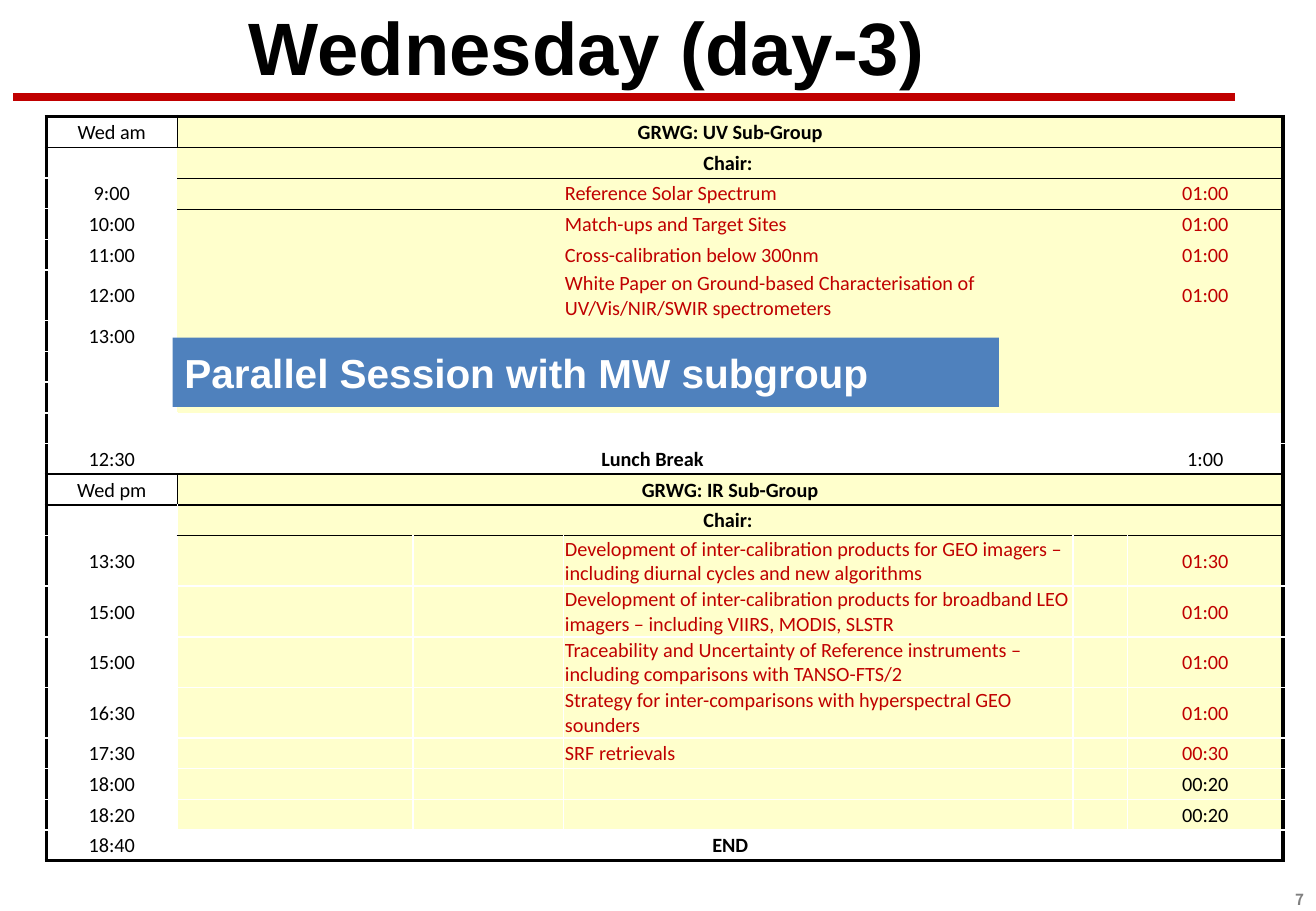
from lxml import etree
from pptx import Presentation
from pptx import util as u
from pptx.dml.color import RGBColor
from pptx.enum import shapes, text
from pptx.oxml import ns

WIDE, HIGH = 10.83, 7.5
BLACK, WHITE, RED, CREAM = "000000", "FFFFFF", "C00000", "FFFFCC"
GREY, BLUE = "808080", "4F81BD"
TITLE = "Wednesday (day-3)"
BANNER = "Parallel Session with MW subgroup"
PAGE = "7"

# time, text, length, columns that the text spans
AGENDA = [
    ("Wed am", "GRWG: UV Sub-Group", "", 5),
    ("", "Chair: ", "", 5),
    ("9:00", "Reference Solar Spectrum", "01:00", 1),
    ("10:00", "Match-ups and Target Sites", "01:00", 1),
    ("11:00", "Cross-calibration below 300nm", "01:00", 1),
    ("12:00", "White Paper on Ground-based Characterisation of "
     "UV/Vis/NIR/SWIR spectrometers", "01:00", 1),
    ("13:00", "", "", 1),
    ("", "", "", 1),
    ("", "", "", 1),
    ("", "", "", 1),
    ("12:30", "Lunch Break", "1:00", 4),
    ("Wed pm", "GRWG: IR Sub-Group", "", 5),
    ("", "Chair: ", "", 5),
    ("13:30", "Development of inter-calibration products for GEO imagers – "
     "including diurnal cycles and new algorithms", "01:30", 1),
    ("15:00", "Development of inter-calibration products for broadband LEO "
     "imagers – including VIIRS, MODIS, SLSTR", "01:00", 1),
    ("15:00", "Traceability and Uncertainty of Reference instruments – "
     "including comparisons with TANSO-FTS/2", "01:00", 1),
    ("16:30", "Strategy for inter-comparisons with hyperspectral GEO sounders",
     "01:00", 1),
    ("17:30", "SRF retrievals", "00:30", 1),
    ("18:00", "", "00:20", 1),
    ("18:20", "", "00:20", 1),
    ("18:40", "END", "", 5),
]
COLS = [1.08, 1.94, 1.24, 4.19, 0.45, 1.28]
LOW, TALL, LONG = 18.2, 29.9, 55     # row heights in points, letters per line
LUNCH, END = 10, len(AGENDA) - 1
PLAIN = {LUNCH - 1, LUNCH, END}      # rows without the cream fill
HEADS = {0, LUNCH + 1}               # rows that open a half day
THICK, THIN, FINE, PALE = (BLACK, 2.25), (BLACK, 1), (BLACK, 0.25), (WHITE, 1)
RULES = {0: THICK, 1: THIN, 2: FINE, 11: THIN, 12: THIN, 13: FINE,
         END + 1: THICK}
NO_STYLE = "{2D5ABB26-0587-4C30-8999-92F81FD0307C}"


def rgb(code):
    return RGBColor.from_string(code)


def write(para, words, size, font, color, bold, align):
    para.alignment = align
    run = para.add_run()
    run.text = words
    face = run.font
    face.size, face.name, face.bold = u.Pt(size), font, bold
    face.color.rgb = rgb(color)


def across(row, col):
    """Line above the given row, in the given column."""
    if col == 0 and RULES.get(row) == FINE:
        return PALE
    return RULES.get(row) or (PALE if col == 0 or row >= LUNCH else None)


def down(row, col):
    """Line to the left of the given column, in the given row."""
    if col in (0, len(COLS)):
        return THICK
    if col == 1 and row in HEADS:
        return THIN
    return PALE if row >= LUNCH - 1 else None


def border(cell, side, line):
    if line:
        color, width = line
        edge = etree.SubElement(cell._tc.get_or_add_tcPr(), ns.qn("a:ln" + side),
                                w=str(u.Pt(width)))
        fill = etree.SubElement(edge, ns.qn("a:solidFill"))
        etree.SubElement(fill, ns.qn("a:srgbClr"), val=color)


def dress(cell, row, col, span):
    """Borders, fill, insets and the text height of an empty cell."""
    first, last = (1, span) if span > 1 and 1 <= col <= span else (col, col)
    border(cell, "L", down(row, col) if col == first else None)
    border(cell, "R", down(row, last + 1) if col in (first, last) else None)
    border(cell, "T", across(row, col))
    border(cell, "B", across(row + 1, col))
    cell.fill.solid()
    cell.fill.fore_color.rgb = rgb(WHITE if col == 0 or row in PLAIN else CREAM)
    cell.margin_left = cell.margin_right = cell.margin_top = u.Inches(0.01)
    cell.margin_bottom = 0
    cell.vertical_anchor = text.MSO_ANCHOR.MIDDLE
    para = cell.text_frame.paragraphs[0]._p
    etree.SubElement(para, ns.qn("a:endParaRPr"), sz="1200")


def agenda(slide):
    size = [u.Inches(n) for n in (0.38, 0.96, sum(COLS), 6.08)]
    frame = slide.shapes.add_table(len(AGENDA), len(COLS), *size)
    grid = frame.table
    grid.first_row = grid.horz_banding = False
    grid._tbl.tblPr.find(ns.qn("a:tableStyleId")).text = NO_STYLE
    for col, width in zip(grid.columns, COLS):
        col.width = u.Inches(width)
    mid, left = text.PP_ALIGN.CENTER, text.PP_ALIGN.LEFT
    for row, (time, topic, length, span) in enumerate(AGENDA):
        grid.rows[row].height = u.Pt(TALL if len(topic) > LONG else LOW)
        for col in range(len(COLS)):
            dress(grid.cell(row, col), row, col, span)
        wide = span > 1
        if wide:
            grid.cell(row, 1).merge(grid.cell(row, span))
        ink = RED if topic and not wide else BLACK
        parts = [(0, time, BLACK, False, mid),
                 (1 if wide else 3, topic, ink, wide, mid if wide else left),
                 (5, length, ink, False, mid)]
        for col, words, color, bold, align in parts:
            if words:
                para = grid.cell(row, col).text_frame.paragraphs[0]
                write(para, words, 12, "Calibri", color, bold, align)


def place(shape, *box):
    shape.left, shape.top, shape.width, shape.height = map(u.Inches, box)


def main():
    deck = Presentation()
    deck.slide_width, deck.slide_height = u.Inches(WIDE), u.Inches(HIGH)
    slide = deck.slides.add_slide(deck.slide_layouts[5])
    parts = slide.shapes

    title = parts.title
    place(title, 0.16, 0.08, 9.34, 0.6)
    title.text_frame.vertical_anchor = text.MSO_ANCHOR.MIDDLE
    title.text_frame.auto_size = text.MSO_AUTO_SIZE.NONE
    write(title.text_frame.paragraphs[0], TITLE, 44, "Arial", BLACK, True,
          text.PP_ALIGN.CENTER)

    ends = [u.Inches(n) for n in (0.11, 0.8, 10.16, 0.8)]
    rule = parts.add_connector(shapes.MSO_CONNECTOR.STRAIGHT, *ends)
    rule.line.color.rgb, rule.line.width = rgb(RED), u.Pt(4.5)
    etree.SubElement(rule._element.spPr, ns.qn("a:effectLst"))

    agenda(slide)

    banner = parts.add_shape(shapes.MSO_SHAPE.RECTANGLE, 0, 0, 0, 0)
    place(banner, 1.42, 2.78, 6.8, 0.57)
    banner.shadow.inherit = False
    banner.fill.solid()
    banner.fill.fore_color.rgb = rgb(BLUE)
    banner.line.fill.background()
    banner.text_frame.vertical_anchor = text.MSO_ANCHOR.MIDDLE
    write(banner.text_frame.paragraphs[0], BANNER, 24, "Arial", WHITE, True,
          text.PP_ALIGN.LEFT)

    page = parts.add_textbox(0, 0, 0, 0)
    place(page, 9.9, 7.28, 0.93, 0.25)
    page.text_frame.word_wrap = True
    write(page.text_frame.paragraphs[0], PAGE, 9, "Noto Sans CJK KR", GREY, True,
          text.PP_ALIGN.RIGHT)
    deck.save("out.pptx")


if __name__ == "__main__":
    main()
